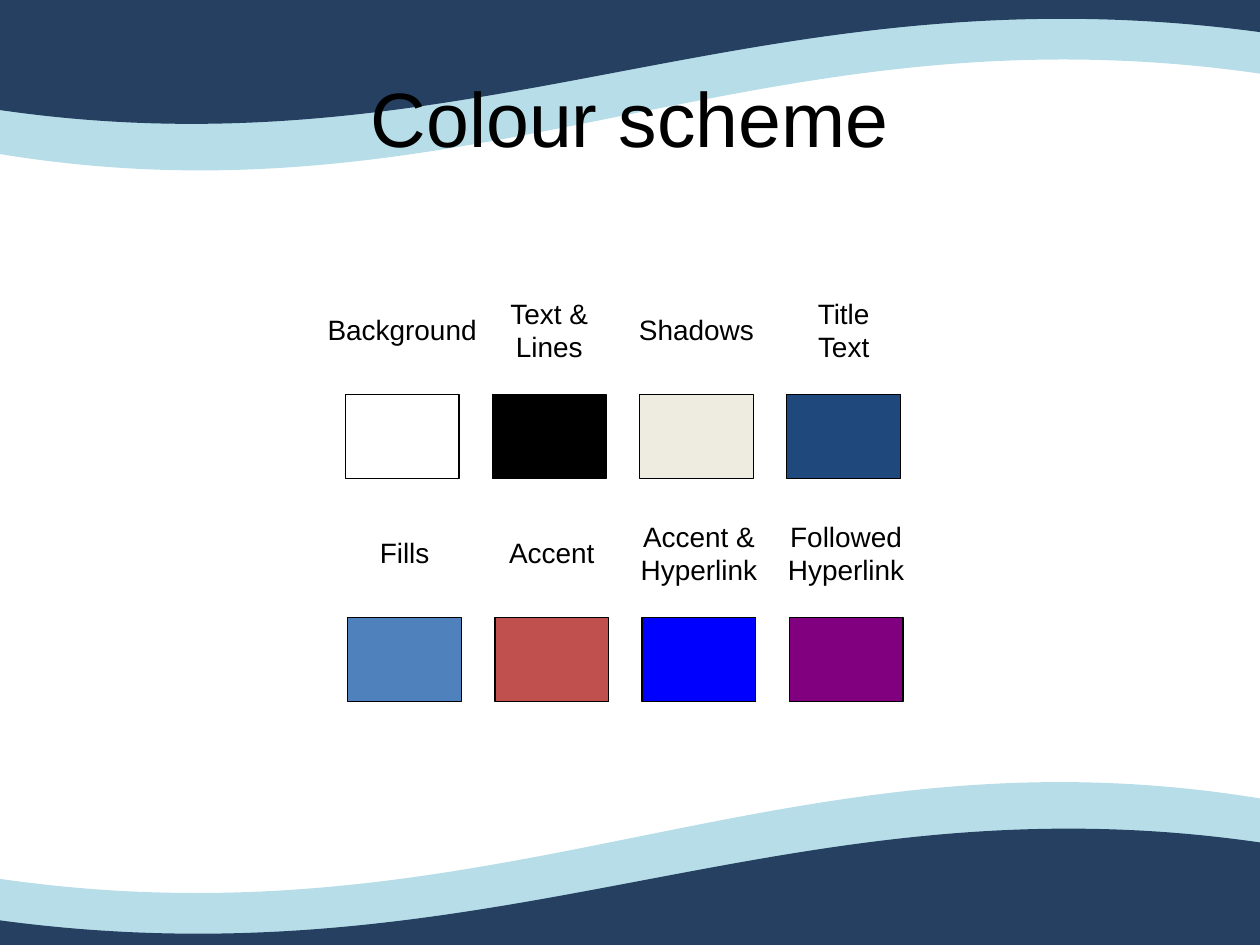
"""Build a colour scheme slide with labelled swatches between two wave bands."""
from dataclasses import dataclass

from lxml.etree import SubElement
from pptx import Presentation
from pptx.dml.color import RGBColor
from pptx.enum.shapes import MSO_SHAPE
from pptx.enum.text import MSO_ANCHOR, MSO_AUTO_SIZE, PP_ALIGN
from pptx.oxml.ns import qn
from pptx.util import Pt


@dataclass(frozen=True)
class Theme:
    font: str = "Arial"
    ink: str = "000000"
    pale: str = "B7DEE8"
    navy: str = "254061"
    head: int = 44
    label: int = 16


THEME = Theme()
WIDE, HIGH = 720, 540
TITLE = "Colour scheme"

ROWS = [
    (197.3, 225.4, [
        ("Background", 100, "FFFFFF"),
        ("Text &\nLines", 60.5, "000000"),
        ("Shadows", 80, "EEECE1"),
        ("Title\vText", 45.4, "1F497D"),
    ]),
    (198.7, 352.8, [
        ("Fills", 42.5, "4F81BD"),
        ("Accent", 63.4, "C0504D"),
        ("Accent &\nHyperlink", 80.6, "0000FF"),
        ("Followed\nHyperlink", 80.6, "800080"),
    ]),
]
PITCH, BOX_W, BOX_H = 84.1, 65, 48.2
RISE, LINE_H, PAD, SIDE = 37, 19.4, 7.2, 3

WAVES = [
    (THEME.pale, (-2.9, -2.2, 725.8, 99.4), [
        ("moveTo", [(722.9, 42.5)]),
        ("cubicBezTo", [(434.2, 0), (272.2, 133.2), (-1.4, 87.8)]),
        ("lnTo", [(-2.9, -0.7)]),
        ("cubicBezTo", [(46.8, -1.4), (146.9, -2.2), (257.8, -2.2)]),
        ("cubicBezTo", [(438.5, -2.2), (648, -1.4), (722.9, 0)]),
    ]),
    (THEME.navy, (-2.2, -3.6, 724.4, 74.9), [
        ("moveTo", [(111.6, -3.6)]),
        ("lnTo", [(720, -0.7)]),
        ("cubicBezTo", [(720, 4.3), (722.2, 13.7), (722.2, 18.7)]),
        ("cubicBezTo", [(433.4, -20.9), (271.4, 103), (-2.2, 62.6)]),
        ("lnTo", [(-2.2, -0.7)]),
    ]),
]
TURN_Y = 544.3


def paint(shape, fill, line=None):
    shape.shadow.inherit = False
    shape.fill.solid()
    shape.fill.fore_color.rgb = RGBColor.from_string(fill)
    if line:
        shape.line.color.rgb = RGBColor.from_string(line)
        shape.line.width = Pt(0.75)
    else:
        shape.line.fill.background()


def add_wave(shapes, fill, box, moves, turned):
    x, y, wide, high = box
    left, top = (WIDE - x - wide, TURN_Y - y - high) if turned else (x, y)
    form = shapes.build_freeform(Pt(left), Pt(top))
    form.add_line_segments([
        (Pt(left + wide), Pt(top)), (Pt(left + wide), Pt(top + high)),
        (Pt(left), Pt(top + high))])
    wave = form.convert_to_shape()
    wave.rotation = 180 if turned else 0
    paint(wave, fill)
    trace = wave.element.find(".//" + qn("a:path"))
    for part in list(trace):
        trace.remove(part)
    for kind, dots in moves:
        move = SubElement(trace, qn("a:" + kind))
        for px, py in dots:
            SubElement(move, qn("a:pt"), x=str(int(Pt(px - x))), y=str(int(Pt(py - y))))
    SubElement(trace, qn("a:close"))


def write(frame, text, size):
    frame.vertical_anchor = MSO_ANCHOR.MIDDLE
    for row, line in enumerate(text.split("\n")):
        para = frame.add_paragraph() if row else frame.paragraphs[0]
        para.alignment = PP_ALIGN.CENTER
        for part, words in enumerate(line.split("\v")):
            if part:
                para.add_line_break()
            run = para.add_run()
            run.text = words
            run.font.name = THEME.font
            run.font.size = Pt(size)
            run.font.color.rgb = RGBColor.from_string(THEME.ink)


def add_swatch(shapes, left, top, text, width, fill):
    box = shapes.add_shape(MSO_SHAPE.RECTANGLE, Pt(left), Pt(top), Pt(BOX_W), Pt(BOX_H))
    paint(box, fill, THEME.ink)
    high = PAD + LINE_H * len(text.replace("\v", "\n").split("\n"))
    label = shapes.add_textbox(
        Pt(left + (BOX_W - width) / 2), Pt(top - RISE - high / 2), Pt(width), Pt(high))
    frame = label.text_frame
    frame.word_wrap = False
    frame.auto_size = MSO_AUTO_SIZE.SHAPE_TO_FIT_TEXT
    frame.margin_left = frame.margin_right = Pt(SIDE)
    write(frame, text, THEME.label)


def main():
    deck = Presentation()
    deck.slide_width, deck.slide_height = Pt(WIDE), Pt(HIGH)
    slide = deck.slides.add_slide(deck.slide_layouts.get_by_name("Title Only"))
    shapes = slide.shapes
    for turned in (True, False):
        for fill, box, moves in WAVES:
            add_wave(shapes, fill, box, moves, turned)

    title = shapes.title
    title.left, title.top, title.width, title.height = Pt(36), Pt(21.6), Pt(648), Pt(90)
    write(title.text_frame, TITLE, THEME.head)
    title.element.getparent().append(title.element)

    for left, top, items in ROWS:
        for col, item in enumerate(items):
            add_swatch(shapes, left + col * PITCH, top, *item)
    deck.save("out.pptx")


if __name__ == "__main__":
    main()
